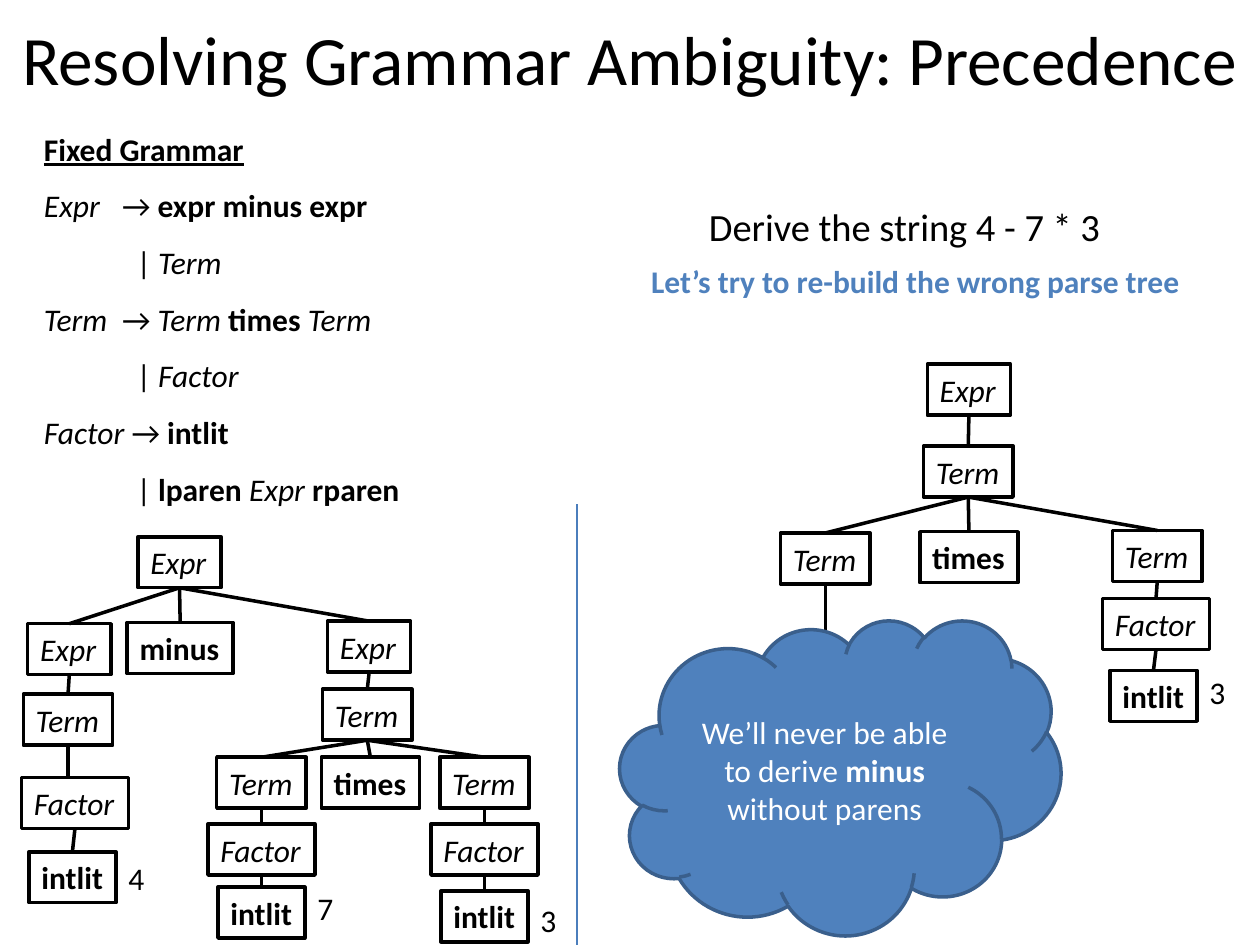
from dataclasses import dataclass

from lxml.etree import SubElement
from pptx import Presentation
from pptx.dml.color import RGBColor
from pptx.enum.shapes import MSO_CONNECTOR, MSO_SHAPE
from pptx.enum.text import MSO_ANCHOR, MSO_AUTO_SIZE, PP_ALIGN
from pptx.oxml.ns import qn
from pptx.util import Inches, Pt

BLACK = RGBColor(0x00, 0x00, 0x00)
WHITE = RGBColor(0xFF, 0xFF, 0xFF)
BLUE = RGBColor(0x4F, 0x81, 0xBD)
DARK_BLUE = RGBColor(0x3A, 0x5F, 0x8C)
RULE_BLUE = RGBColor(0x4B, 0x7E, 0xBC)
FONT = "Calibri"
TOP, BOTTOM = 0, 2

# The slide is a grid of 100 columns by 75 rows
WIDTH, HEIGHT = Inches(10), Inches(7.5)
COLS, ROWS = 100, 75
BOX_ROWS = 4.05
BOX_COLS = {"Expr": 6.6, "Term": 7.1, "Factor": 8.5,
            "intlit": 6.9, "minus": 8.4, "times": 7.8}
NONTERMINALS = ("Expr", "Term", "Factor")


@dataclass(frozen=True)
class Run:
    text: str
    style: str = ""  # any of b, i, u


@dataclass(frozen=True)
class Node:
    word: str
    col: float  # centre of the box
    row: float  # top of the box
    children: tuple = ()
    value: str = ""
    value_row: float = 0
    plumb: bool = False  # branch drops straight from the parent


def x(cols: float) -> int:
    return round(WIDTH * cols / COLS)


def y(rows: float) -> int:
    return round(HEIGHT * rows / ROWS)


def format_run(r, size: float, color: RGBColor, style: str = "") -> None:
    r.font.name, r.font.size = FONT, Pt(size)
    r.font.color.rgb = color
    r.font.bold, r.font.italic = "b" in style, "i" in style
    r.font.underline = "u" in style


def write(p, runs: tuple, color: RGBColor, align=PP_ALIGN.LEFT) -> None:
    p.alignment = align
    for run in runs:
        r = p.add_run()
        r.text = run.text
        format_run(r, 18, color, run.style)


def add_label(s, col: float, row: float, cols: float, rows: float, text: str,
              size: float = 18, color: RGBColor = BLACK, style: str = "",
              align=PP_ALIGN.LEFT) -> None:
    tf = s.shapes.add_textbox(x(col), y(row), x(cols), y(rows)).text_frame
    tf.word_wrap = False
    tf.auto_size = MSO_AUTO_SIZE.SHAPE_TO_FIT_TEXT
    p = tf.paragraphs[0]
    p.text, p.alignment = text, align
    format_run(p.runs[0], size, color, style)


def add_shape(s, kind, col: float, row: float, cols: float, rows: float,
              fill: RGBColor, line: RGBColor):
    sp = s.shapes.add_shape(kind, x(col), y(row), x(cols), y(rows))
    sp.shadow.inherit = False
    sp.fill.solid()
    sp.fill.fore_color.rgb = fill
    sp.line.color.rgb, sp.line.width = line, Pt(2)
    return sp


def add_line(s, x1: int, y1: int, x2: int, y2: int,
             color: RGBColor = BLACK, width: float = 2):
    cx = s.shapes.add_connector(MSO_CONNECTOR.STRAIGHT, x1, y1, x2, y2)
    cx.line.color.rgb, cx.line.width = color, Pt(width)
    SubElement(cx._element.spPr, qn("a:effectLst"))
    return cx


def add_tree(s, node: Node):
    """Draw a node with its subtree and return its box."""
    cols = BOX_COLS[node.word]
    box = add_shape(s, MSO_SHAPE.RECTANGLE, node.col - cols / 2, node.row,
                    cols, BOX_ROWS, WHITE, BLACK)
    tf = box.text_frame
    tf.word_wrap = False
    tf.auto_size = MSO_AUTO_SIZE.SHAPE_TO_FIT_TEXT
    style = "i" if node.word in NONTERMINALS else "b"
    write(tf.paragraphs[0], (Run(node.word, style),), BLACK)
    if node.value:
        add_label(s, node.col + cols / 2, node.value_row, 3.3, BOX_ROWS, node.value)
    for child in node.children:
        child_box = add_tree(s, child)
        end_col = node.col if child.plumb else child.col
        branch = add_line(s, x(node.col), box.top + box.height,
                          x(end_col), child_box.top)
        branch.begin_connect(box, BOTTOM)
        if not child.plumb:
            branch.end_connect(child_box, TOP)
    return box


def term_chain(col: float, intlit_row: float, value: str, value_row: float) -> Node:
    intlit = Node("intlit", col, intlit_row, (), value, value_row)
    return Node("Term", col, 60.1, (Node("Factor", col, 65.4, (intlit,)),))


GRAMMAR = (
    (Run("Fixed Grammar", "bu"),),
    (Run("Expr\t", "i"), Run("→ "), Run("expr minus expr", "b")),
    (Run("| "), Run("Term", "i")),
    (Run("Term\t", "i"), Run("→ "), Run("Term ", "i"), Run("times ", "b"),
     Run("Term", "i")),
    (Run("| "), Run("Factor", "i")),
    (Run("Factor ", "i"), Run("→ "), Run("intlit", "b")),
    (Run("| "), Run("lparen ", "b"), Run("Expr ", "i"), Run("rparen", "b")),
)

CORRECT_TREE = Node("Expr", 14.25, 42.6, (
    Node("Expr", 5.5, 49.5, (
        Node("Term", 5.4, 55.1, (
            Node("Factor", 5.95, 61.7, (
                Node("intlit", 5.75, 67.6, (), "4", 67.7),), plumb=True),)),)),
    Node("minus", 14.3, 49.4),
    Node("Expr", 29.3, 49.3, (
        Node("Term", 29.15, 54.7, (
            term_chain(20.75, 70.4, "7", 70.1),
            Node("times", 29.4, 60.1),
            term_chain(38.45, 70.7, "3", 71))),)),
))

BLOCKED_TERM = Node("Term", 65.5, 42.3)
WRONG_TREE = Node("Expr", 76.9, 28.9, (
    Node("Term", 76.85, 35.4, (
        BLOCKED_TERM,
        Node("times", 76.9, 42.2),
        Node("Term", 91.85, 42.1, (
            Node("Factor", 91.75, 47.5, (
                Node("intlit", 91.55, 53.2, (), "3", 52.9),)),)))),
))

CLOUD_TEXT = (
    (Run("We’ll never be able to derive "), Run("minus", "b")),
    (Run("without parens"),),
)


def add_grammar(s) -> None:
    tf = s.shapes.add_textbox(x(2.5), y(8.3), x(32.5), y(32.8)).text_frame
    tf.word_wrap = True
    tf.auto_size = MSO_AUTO_SIZE.SHAPE_TO_FIT_TEXT
    for i, runs in enumerate(GRAMMAR):
        p = tf.add_paragraph() if i else tf.paragraphs[0]
        write(p, runs, BLACK)
        p.line_spacing = 1.5
        pPr = p._p.get_or_add_pPr()
        if runs[0].text == "| ":  # alternatives are indented
            pPr.set("marL", str(x(7.35)))
        elif "\t" in runs[0].text:  # arrows line up on a tab stop
            tabs = SubElement(pPr, qn("a:tabLst"))
            SubElement(tabs, qn("a:tab"), pos=str(x(6.2)), algn="l")


def main() -> None:
    prs = Presentation()
    prs.slide_width, prs.slide_height = WIDTH, HEIGHT
    s = prs.slides.add_slide(prs.slide_layouts[5])

    # Title
    title = s.shapes.title
    title.left, title.top, title.width, title.height = 0, y(-1.7), WIDTH, y(12.5)
    title.text_frame.text = "Resolving Grammar Ambiguity: Precedence"
    format_run(title.text_frame.paragraphs[0].runs[0], 39.6, BLACK)

    # Grammar and task
    add_grammar(s)
    add_label(s, 55.1, 15.6, 33.4, 4.7, "Derive the string 4 - 7 * 3", 22,
              align=PP_ALIGN.CENTER)
    add_label(s, 50.7, 20.3, 44.3, BOX_ROWS,
              "Let’s try to re-build the wrong parse tree", color=BLUE, style="b")

    # Parse trees and the rule between them
    add_tree(s, CORRECT_TREE)
    add_line(s, x(45.8), y(40), x(45.8), HEIGHT, RULE_BLUE, 0.75)
    add_tree(s, WRONG_TREE)
    stem_col = BLOCKED_TERM.col
    add_line(s, x(stem_col), y(BLOCKED_TERM.row + BOX_ROWS), x(stem_col), y(50.7))

    # Cloud over the blocked branch
    cloud = add_shape(s, MSO_SHAPE.CLOUD, 49.2, 49.2, 35, 25, BLUE, DARK_BLUE)
    tf = cloud.text_frame
    tf.word_wrap, tf.vertical_anchor = True, MSO_ANCHOR.MIDDLE
    for i, runs in enumerate(CLOUD_TEXT):
        p = tf.add_paragraph() if i else tf.paragraphs[0]
        write(p, runs, WHITE, PP_ALIGN.CENTER)

    prs.save("out.pptx")


if __name__ == "__main__":
    main()
